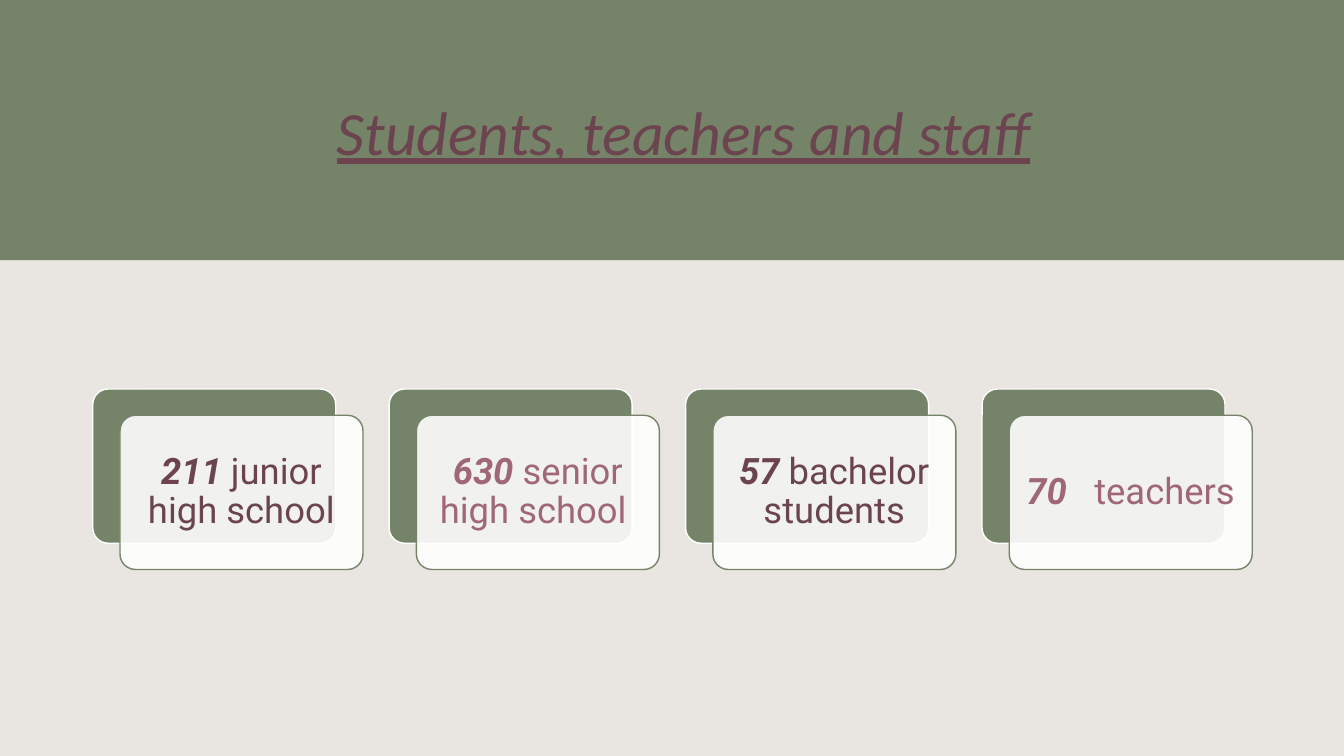
from pptx import Presentation
from pptx.dml.color import RGBColor
from pptx.enum.shapes import MSO_SHAPE
from pptx.enum.text import MSO_ANCHOR, PP_ALIGN
from pptx.oxml.ns import qn
from pptx.util import Inches, Pt
from lxml import etree

RECTANGLE, ROUNDED = MSO_SHAPE.RECTANGLE, MSO_SHAPE.ROUNDED_RECTANGLE
MIDDLE, CENTER = MSO_ANCHOR.MIDDLE, PP_ALIGN.CENTER

WHITE = RGBColor(0xFF, 0xFF, 0xFF)
SAND = RGBColor(0xE0, 0xDA, 0xD4)
SAGE = RGBColor(0x75, 0x84, 0x68)
PLUM = RGBColor(0x6B, 0x44, 0x4F)
ROSE = RGBColor(0x9F, 0x67, 0x77)

SLIDE_W, SLIDE_H = 13.33, 7.5
BAND_H = 2.58
CARD_W, CARD_H = 2.41, 1.53
CARD_OFFSET = (0.27, 0.26)
CARD_PITCH = 2.94
CARD_INSET = Inches(0.11)
WIDE_GAP = 13  # points added after the space that follows the number

# number, label, colour, extra gap after the number
GROUPS = [
    ("211", "junior high school", PLUM, 0),
    ("630", "senior high school ", ROSE, 0),
    ("57", "bachelor students", PLUM, 0),
    ("70", "teachers ", ROSE, WIDE_GAP),
]


def add_panel(slide, preset, box, fill, line=None, opacity=100):
    panel = slide.shapes.add_shape(preset, *map(Inches, box))
    panel.shadow.inherit = False
    panel.fill.solid()
    panel.fill.fore_color.rgb = fill
    if opacity < 100:
        color = panel.fill._xPr.find(qn("a:solidFill"))[0]
        etree.SubElement(color, qn("a:alpha"), val=str(opacity * 1000))
    if line is None:
        panel.line.fill.background()
    else:
        panel.line.color.rgb = line
        panel.line.width = Pt(1)
    if preset == ROUNDED:
        panel.adjustments[0] = 0.1
    return panel


def add_backdrop(slide):
    add_panel(slide, RECTANGLE, (0, 0, SLIDE_W, SLIDE_H), SAND, opacity=70)
    add_panel(slide, RECTANGLE, (0, 0, SLIDE_W, BAND_H), SAGE)


def add_title(slide, box, wording):
    title = slide.shapes.add_textbox(*map(Inches, box)).text_frame
    title.word_wrap = True
    title.vertical_anchor = MIDDLE
    title.text = wording
    title.paragraphs[0].alignment = CENTER
    font = title.paragraphs[0].runs[0].font
    font.name, font.size = "Calibri", Pt(44)
    font.italic = font.underline = True
    font.color.rgb = PLUM


def add_card(slide, left, top, number, label, color, extra_gap):
    """Draw a green card with a translucent white one, holding the text, over it."""
    add_panel(slide, ROUNDED, (left, top, CARD_W, CARD_H), SAGE, WHITE)
    dx, dy = CARD_OFFSET
    front = add_panel(slide, ROUNDED, (left + dx, top + dy, CARD_W, CARD_H),
                      WHITE, SAGE, opacity=90)
    frame = front.text_frame
    frame.word_wrap = True
    frame.vertical_anchor = MIDDLE
    frame.margin_left = frame.margin_right = CARD_INSET
    frame.margin_top = frame.margin_bottom = CARD_INSET
    caption = frame.paragraphs[0]
    caption.alignment = CENTER
    caption.line_spacing = 0.9
    for part in (number, " ", label):
        run = caption.add_run()
        run.text = part
        font = run.font
        font.name, font.size = "Roboto", Pt(26)
        font.bold = font.italic = part == number
        font.color.rgb = color
        if part == " " and extra_gap:
            run._r.get_or_add_rPr().set("spc", str(extra_gap * 100))


def add_card_row(slide, left, top):
    for index, group in enumerate(GROUPS):
        add_card(slide, left + index * CARD_PITCH, top, *group)


def main():
    deck = Presentation()
    deck.slide_width, deck.slide_height = Inches(SLIDE_W), Inches(SLIDE_H)
    slide = deck.slides.add_slide(deck.slide_layouts[6])
    add_backdrop(slide)
    add_title(slide, (1.31, 0.42, 10.94, 1.75), "Students, teachers and staff")
    add_card_row(slide, 0.92, 3.86)
    deck.save("out.pptx")


if __name__ == "__main__":
    main()
